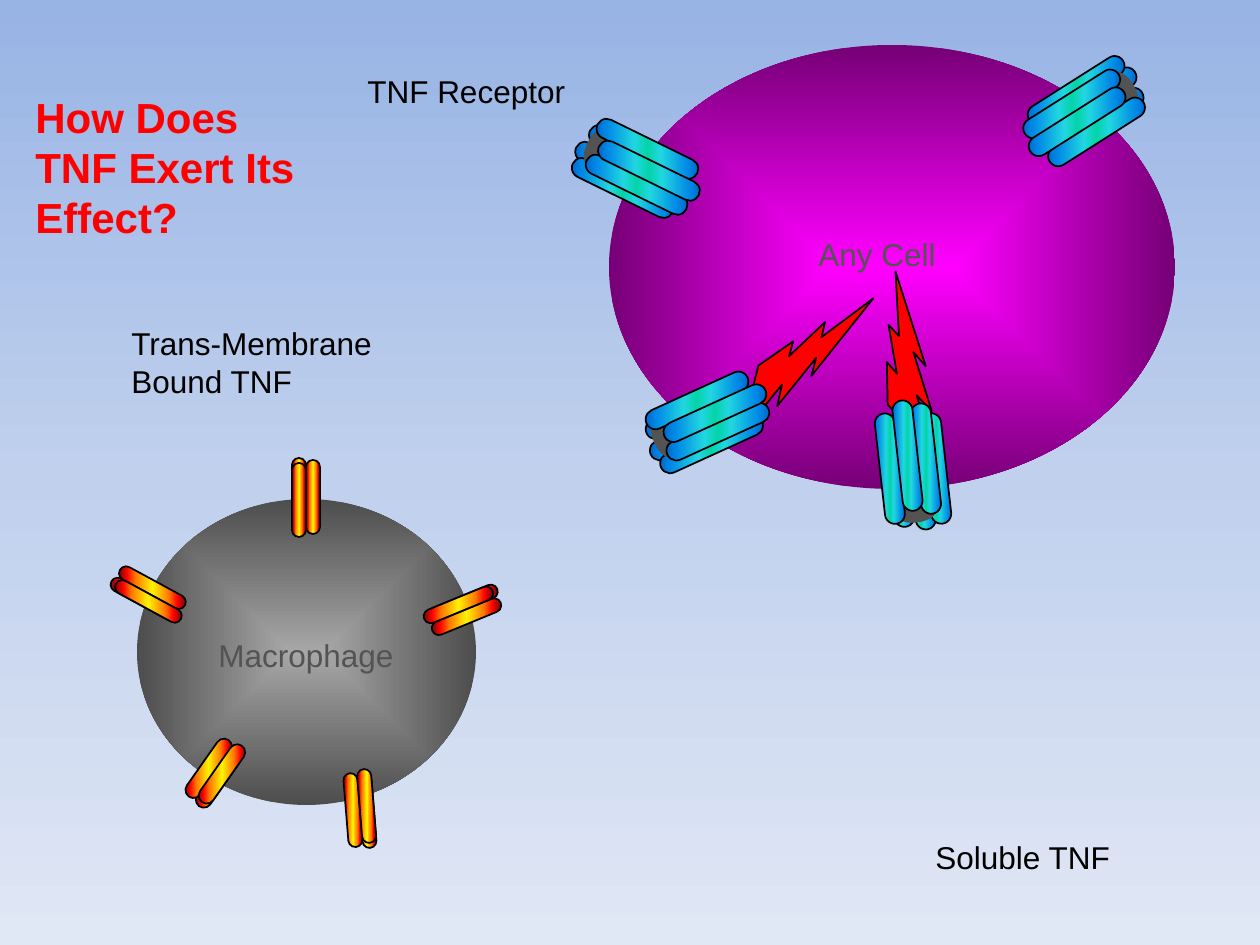
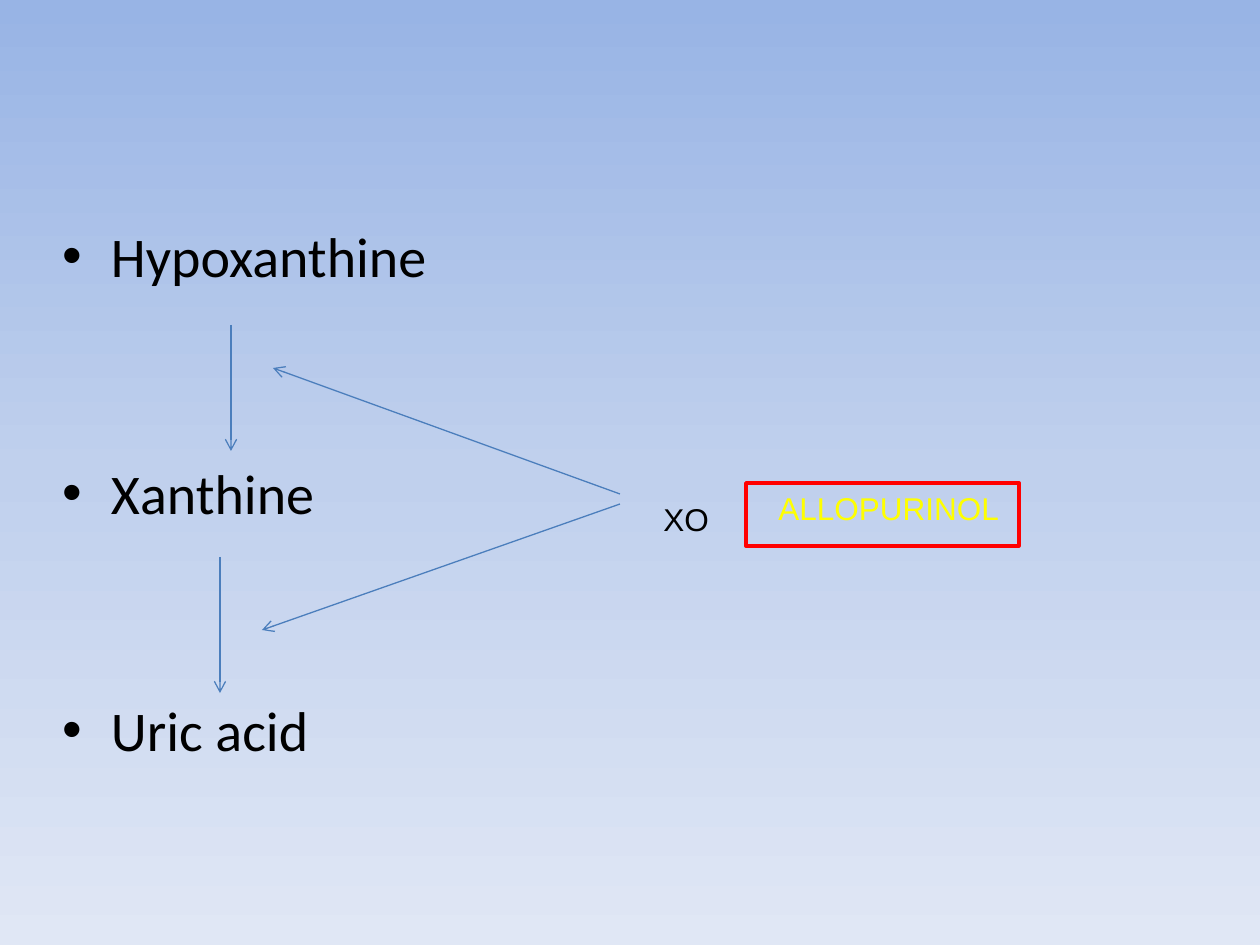
from dataclasses import dataclass
from math import cos, radians, sin

from lxml import etree
from pptx import Presentation
from pptx.dml.color import RGBColor
from pptx.enum.shapes import MSO_CONNECTOR, MSO_SHAPE
from pptx.enum.text import MSO_AUTO_SIZE
from pptx.oxml.ns import nsdecls, qn
from pptx.oxml import parse_xml
from pptx.util import Emu, Pt

OVAL = MSO_SHAPE.OVAL
ROUNDED = MSO_SHAPE.ROUNDED_RECTANGLE
RECTANGLE = MSO_SHAPE.RECTANGLE
BOLT = MSO_SHAPE.LIGHTNING_BOLT
STRAIGHT = MSO_CONNECTOR.STRAIGHT
GROW = MSO_AUTO_SIZE.SHAPE_TO_FIT_TEXT
EMU_PER_PX = 914400 / 126


@dataclass(frozen=True)
class Theme:
    black: str = "000000"
    gray: str = "535353"
    red: str = "FF0000"
    yellow: str = "FFFF00"
    arrow: str = "4B7EBC"
    sky: tuple = ((0, "98B4E5"), (50, "C0D0ED"), (100, "E0E7F5"))
    any_cell: tuple = ((0, "FF00FF"), (100, "760076"))
    macrophage: tuple = ((0, "A7A7A7"), (100, "4D4D4D"))
    receptor: tuple = ((0, "005CBF"), (12, "0087E6"), (38, "21D6E0"),
                       (50, "03D4A8"), (62, "21D6E0"), (88, "0087E6"),
                       (100, "005CBF"))
    ligand: tuple = ((0, "4D0808"), (15, "FF0300"), (27, "FF7A00"),
                     (50, "FFF200"), (73, "FF7A00"), (85, "FF0300"),
                     (100, "4D0808"))
    label_font: str = "Arial"
    body_font: str = "Calibri"
    label_size: int = 18
    title_size: int = 24
    body_size: int = 32


THEME = Theme()
LINEAR_ACROSS = '<a:lin ang="0" scaled="1"/>'
LINEAR_DOWN = '<a:lin ang="5400000" scaled="1"/>'
FROM_CENTER = ('<a:path path="shape"><a:fillToRect l="50000" t="50000" '
               'r="50000" b="50000"/></a:path>')
RECEPTOR_BACK = ((-9, 38), (-25, 42), (12, 43))
RECEPTOR_FRONT = ((-16, 53), (21, 47), (2, 58))
LIGAND_RODS = ((0, 0), (14, 2), (0, 5))


def px(length):
    return Emu(round(length * EMU_PER_PX))


def color(value):
    return RGBColor.from_string(value)


def paint_gradient(fill, properties_of, stops, direction):
    fill.background()
    stop_xml = "".join(
        f'<a:gs pos="{position * 1000}"><a:srgbClr val="{value}"/></a:gs>'
        for position, value in stops)
    gradient = parse_xml(
        f'<a:gradFill {nsdecls("a")} rotWithShape="0">'
        f'<a:gsLst>{stop_xml}</a:gsLst>{direction}</a:gradFill>')
    properties = properties_of()
    properties.replace(properties.find(qn("a:noFill")), gradient)


def add_figure(shapes, kind, left, top, width, height, fill=None,
               direction=None, line=None, line_width=1, rotation=0):
    figure = shapes.add_shape(kind, px(left), px(top), px(width), px(height))
    figure.shadow.inherit = False
    figure.rotation = rotation
    if direction:
        paint_gradient(figure.fill, lambda: figure.element.spPr, fill, direction)
    elif fill:
        figure.fill.solid()
        figure.fill.fore_color.rgb = color(fill)
    else:
        figure.fill.background()
    if line:
        figure.line.color.rgb = color(line)
        figure.line.width = Pt(line_width)
    else:
        figure.line.fill.background()
    return figure


def add_cell(page, left, top, width, height, stops):
    add_figure(page.shapes, OVAL, left, top, width, height, stops, FROM_CENTER)


def add_bolt(page, left, top, rotation):
    add_figure(page.shapes, BOLT, left, top, 180, 76, THEME.red,
               line=THEME.black, rotation=rotation)


def add_rods(group, anchor, rotation, offsets, size, stops):
    cosine, sine = cos(radians(rotation)), sin(radians(rotation))
    width, height = size
    for across, along in offsets:
        center_x = anchor[0] + across * cosine - along * sine
        center_y = anchor[1] + across * sine + along * cosine
        rod = add_figure(group.shapes, ROUNDED, center_x - width / 2,
                         center_y - height / 2, width, height, stops,
                         LINEAR_ACROSS, THEME.black, rotation=rotation)
        rod.adjustments[0] = 0.5


def add_receptor(page, pore, rotation):
    group = page.shapes.add_group_shape()
    add_rods(group, pore, rotation, RECEPTOR_BACK, (20, 111), THEME.receptor)
    add_figure(group.shapes, OVAL, pore[0] - 20, pore[1] - 9.5, 40, 19,
               THEME.gray, rotation=rotation)
    add_rods(group, pore, rotation, RECEPTOR_FRONT, (20, 111), THEME.receptor)


def add_ligand(page, anchor, rotation, size=(14, 74)):
    group = page.shapes.add_group_shape()
    add_rods(group, anchor, rotation, LIGAND_RODS, size, THEME.ligand)


def format_text(para, font, size, value, bold=False):
    for span in para.runs:
        span.font.name = font
        span.font.size = Pt(size)
        span.font.bold = bold
        span.font.color.rgb = color(value)


def add_label(page, text, left, top, width, height=50, value=THEME.black,
              size=THEME.label_size, bold=False, wrap=True):
    box = page.shapes.add_textbox(px(left), px(top), px(width), px(height))
    frame = box.text_frame
    frame.word_wrap = wrap
    frame.auto_size = GROW
    frame.text = text
    format_text(frame.paragraphs[0], THEME.label_font, size, value, bold)


def add_steps(page, steps, left, top, width, height, gap):
    box = page.shapes.add_textbox(px(left), px(top), px(width), px(height))
    frame = box.text_frame
    frame.word_wrap = True
    frame.margin_left = frame.margin_right = 0
    frame.margin_top = frame.margin_bottom = 0
    frame.text = "\n".join(steps)
    for index, para in enumerate(frame.paragraphs):
        para.space_before = Pt(gap if index else 0)
        format_text(para, THEME.body_font, THEME.body_size, THEME.black)
        properties = para._p.get_or_add_pPr()
        properties.set("marL", str(px(48)))
        properties.set("indent", str(-px(48)))
        bullet_font = etree.SubElement(properties, qn("a:buFont"))
        bullet_font.set("typeface", THEME.label_font)
        etree.SubElement(properties, qn("a:buChar")).set("char", "•")


def add_arrow(page, start, end):
    arrow = page.shapes.add_connector(
        STRAIGHT, *(px(value) for value in (*start, *end)))
    arrow.line.color.rgb = color(THEME.arrow)
    arrow.line.width = Pt(0.75)
    line = arrow.line._get_or_add_ln()
    etree.SubElement(line, qn("a:tailEnd")).set("type", "arrow")
    etree.SubElement(arrow.element.spPr, qn("a:effectLst"))


def paint_background(master):
    paint_gradient(master.background.fill,
                   lambda: master.element.find(".//" + qn("p:bgPr")),
                   THEME.sky, LINEAR_DOWN)


def build_tnf_page(page):
    add_cell(page, 609, 45, 566, 444, THEME.any_cell)
    add_bolt(page, 711, 326, 294.9)
    add_receptor(page, (663, 439), 245.5)

    add_cell(page, 137, 499, 339, 306, THEME.macrophage)
    add_ligand(page, (299, 495), 0)
    add_ligand(page, (463, 603), 67.7)
    add_ligand(page, (144, 599), 298.5)
    add_ligand(page, (219, 778), 215.1, (16, 69))
    add_label(page, "Macrophage", 206, 630, 205, value=THEME.gray)

    add_receptor(page, (596, 147), 296.1)
    add_receptor(page, (1125, 89), 57.6)
    add_label(page, "Any Cell", 806, 229, 145, value=THEME.gray)
    add_label(page, "Trans-Membrane Bound TNF", 119, 318, 336, 88)
    add_label(page, "TNF Receptor", 355, 66, 336)
    add_label(page, "Soluble TNF", 923, 832, 336)
    add_bolt(page, 820, 330, 238.6)
    add_receptor(page, (916, 513), 173.6)
    add_ligand(page, (367, 811), 175.4)
    add_label(page, "How Does TNF Exert Its Effect?", 23, 85, 316, 165,
              THEME.red, THEME.title_size, bold=True)


def build_xanthine_page(page):
    add_steps(page, ("Hypoxanthine", "Xanthine", "Uric acid"),
              63, 221, 1134, 724, gap=97.2)
    add_arrow(page, (231, 325), (231, 451))
    add_arrow(page, (220, 557), (220, 693))
    add_label(page, "XO", 651, 494, 72, wrap=False)
    add_arrow(page, (620, 494), (273, 368))
    add_arrow(page, (620, 504), (262, 630))
    add_label(page, "ALLOPURINOL", 766, 483, 248, value=THEME.yellow, wrap=False)
    add_figure(page.shapes, RECTANGLE, 746, 483, 273, 63,
               line=THEME.red, line_width=2)


def main():
    deck = Presentation()
    deck.slide_width, deck.slide_height = px(1260), px(945)
    paint_background(deck.slide_master)
    for build_page in (build_tnf_page, build_xanthine_page):
        build_page(deck.slides.add_slide(deck.slide_layouts[6]))
    deck.save("out.pptx")


if __name__ == "__main__":
    main()
